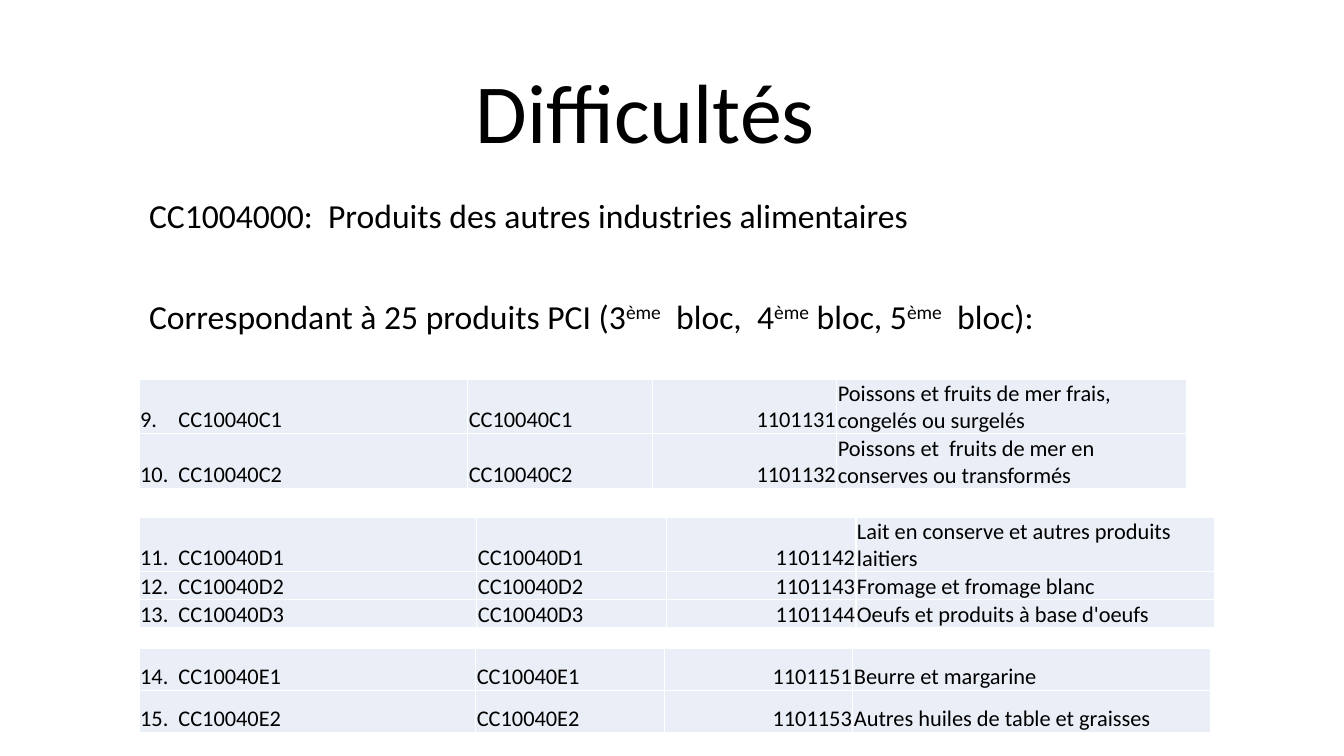
import pptx
import pptx.util
import pptx.dml.color
import pptx.enum.text
import lxml.etree

PX = 9144  # 100 px to the inch
ALIGN = pptx.enum.text.PP_ALIGN
ANCHOR = pptx.enum.text.MSO_ANCHOR
THEME = {
    "font": "Calibri",
    "ink": pptx.dml.color.RGBColor.from_string("000000"),
    "cell": pptx.dml.color.RGBColor.from_string("EAEFF7"),
    "title": 60,
    "body": 24,
    "table": 16,
}


def style(para, size, align):
    para.alignment = align
    para.font.name = THEME["font"]
    para.font.size = pptx.util.Pt(THEME[size])
    para.font.color.rgb = THEME["ink"]


def number(para, start):
    props = para._p.get_or_add_pPr()
    props.set("marL", str(38 * PX))
    props.set("indent", str(-38 * PX))
    tag = "{http://schemas.openxmlformats.org/drawingml/2006/main}buAutoNum"
    mark = lxml.etree.Element(tag, type="arabicPeriod", startAt=str(start))
    props.insert_element_before(mark, "a:tabLst", "a:defRPr", "a:extLst")


deck = pptx.Presentation()
deck.slide_width, deck.slide_height = 1333 * PX, 750 * PX
slide = deck.slides.add_slide(deck.slide_layouts[5])

# Title
title = slide.shapes.title
title.left, title.top, title.width, title.height = 140 * PX, 19 * PX, 1000 * PX, 146 * PX
frame = title.text_frame
frame.text = "Difficultés"
frame.auto_size = pptx.enum.text.MSO_AUTO_SIZE.NONE
frame.vertical_anchor = ANCHOR.BOTTOM
style(frame.paragraphs[0], "title", ALIGN.CENTER)
frame.paragraphs[0].line_spacing = 0.9

# Introduction: text, space before in points; "^" switches superscript
intro = [
    ("CC1004000:  Produits des autres industries alimentaires ", 10),
    ("Correspondant à 25 produits PCI (3^ème^  bloc,  4^ème^ bloc, 5^ème^  bloc):", 46),
]
frame = slide.shapes.add_textbox(138 * PX, 193 * PX, 1000 * PX, 107 * PX).text_frame
frame.word_wrap = True
for i, (text, gap) in enumerate(intro):
    para = frame.paragraphs[0] if i == 0 else frame.add_paragraph()
    style(para, "body", ALIGN.JUSTIFY)
    para.line_spacing = 0.9
    para.space_before = pptx.util.Pt(gap)
    for j, part in enumerate(text.split("^")):
        run = para.add_run()
        run.text = part
        if j % 2:
            run.font._element.set("baseline", "30000")

# Product blocks: top, row height, column widths, rows
blocks = [
    (376, 18, (326, 183, 183, 347), [
        ("CC10040C1", "1101131", "Poissons et fruits de mer frais, congelés ou surgelés"),
        ("CC10040C2", "1101132", "Poissons et  fruits de mer en conserves ou transformés"),
    ]),
    (513, 18, (335, 188, 188, 356), [
        ("CC10040D1", "1101142", "Lait en conserve et autres produits laitiers"),
        ("CC10040D2", "1101143", "Fromage et fromage blanc"),
        ("CC10040D3", "1101144", "Oeufs et produits à base d'oeufs"),
    ]),
    (643, 42, (334, 187, 187, 355), [
        ("CC10040E1", "1101151", "Beurre et margarine"),
        ("CC10040E2", "1101153", "Autres huiles de table et graisses"),
    ]),
]
count = 9
for top, high, widths, rows in blocks:
    table = slide.shapes.add_table(
        len(rows), len(widths), 138 * PX, top * PX, sum(widths) * PX, high * len(rows) * PX
    ).table
    table.first_row = table.horz_banding = False
    for col, width in zip(table.columns, widths):
        col.width = width * PX
    for r, (code, pci, label) in enumerate(rows):
        table.rows[r].height = high * PX
        for c, text in enumerate((code, code, pci, label)):
            cell = table.cell(r, c)
            cell.text = text
            cell.fill.solid()
            cell.fill.fore_color.rgb = THEME["cell"]
            cell.vertical_anchor = ANCHOR.BOTTOM
            cell.margin_left = cell.margin_right = cell.margin_top = PX
            cell.margin_bottom = 0
            style(cell.text_frame.paragraphs[0], "table", ALIGN.RIGHT if c == 2 else ALIGN.LEFT)
        number(table.cell(r, 0).text_frame.paragraphs[0], count)
        count += 1

deck.save("out.pptx")
